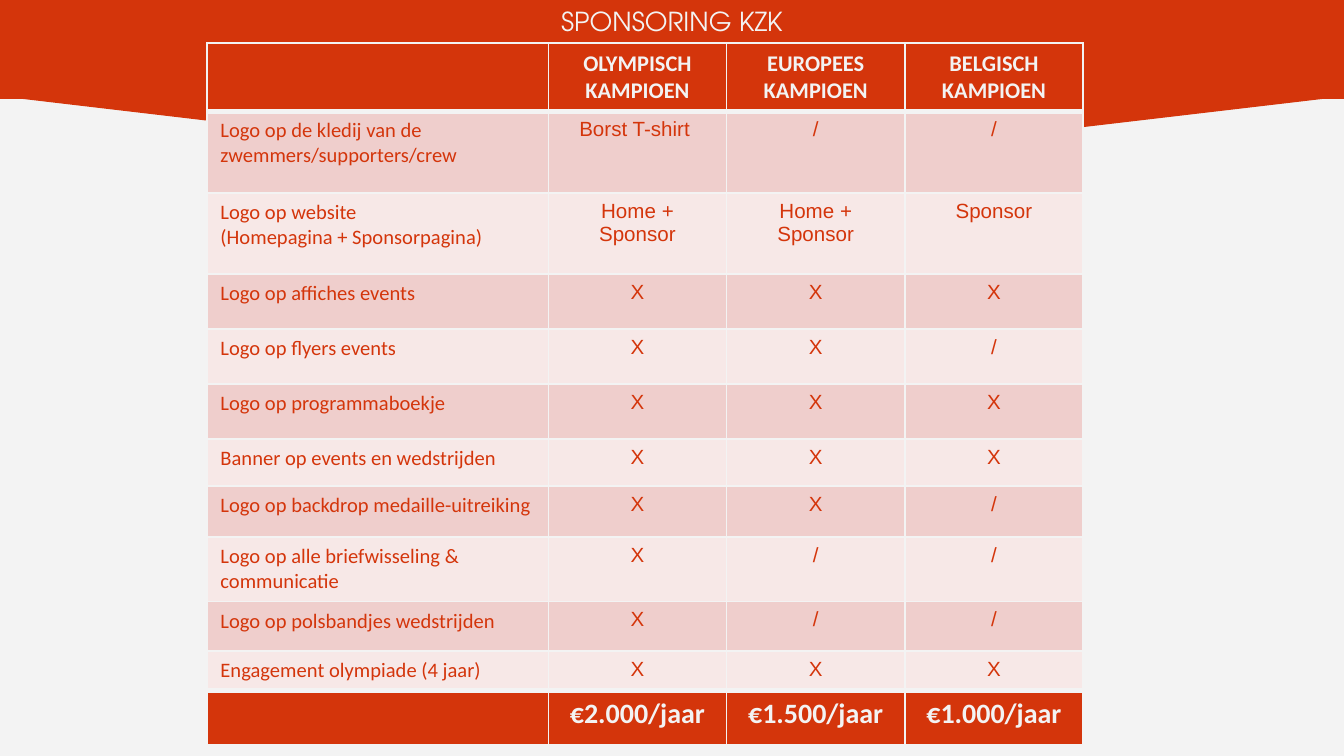
import pptx
import pptx.util
import pptx.dml.color
import pptx.enum.shapes
import pptx.enum.text
import pptx.oxml
import pptx.oxml.ns

Inches, Pt = pptx.util.Inches, pptx.util.Pt
RGB = pptx.dml.color.RGBColor
Shape = pptx.enum.shapes.MSO_SHAPE
Align = pptx.enum.text.PP_ALIGN

RED = RGB(0xD4, 0x35, 0x0B)
PALE = RGB(0xF3, 0xF3, 0xF3)
ROSE = RGB(0xEF, 0xCE, 0xCC)
BLUSH = RGB(0xF7, 0xE8, 0xE7)

TITLE = "SPONSORING KZK"
ROWS = [
    (0.5, "", "OLYMPISCH KAMPIOEN", "EUROPEES KAMPIOEN", "BELGISCH KAMPIOEN"),
    (0.61, "Logo op de kledij van de zwemmers/supporters/crew", "Borst T-shirt ", "/", "/"),
    (0.6, "Logo op website\n(Homepagina + Sponsorpagina)", "Home + Sponsor", "Home + Sponsor", "Sponsor"),
    (0.41, "Logo op affiches events", "X", "X", "X"),
    (0.41, "Logo op flyers events", "X", "X", "/"),
    (0.41, "Logo op programmaboekje", "X", "X", "X"),
    (0.35, "Banner op events en wedstrijden", "X", "X", "X"),
    (0.38, "Logo op backdrop medaille-uitreiking", "X", "X", "/"),
    (0.48, "Logo op alle briefwisseling & communicatie", "X", "/", "/"),
    (0.37, "Logo op polsbandjes wedstrijden", "X", "/", "/"),
    (0.29, "Engagement olympiade (4 jaar)", "X", "X", "X"),
    (0.41, "", "€2.000/jaar", "€1.500/jaar", "€1.000/jaar"),
]
WIDE, LABEL = 6.52, 2.54
COLS = [LABEL] + [(WIDE - LABEL) / 3] * 3
BANNER = [
    (Shape.ISOSCELES_TRIANGLE, 0.71, 0.59, 180),
    (Shape.RECTANGLE, -0.21, 0.94, 0),
]


def style(par, size, face, color, bold=False):
    par.font.size = Pt(size)
    par.font.name = face
    par.font.color.rgb = color
    par.font.bold = bold


def border(cell, top, base):
    props = cell._tc.get_or_add_tcPr()
    for side, width in zip("LRTB", (1, 1, top, base)):
        props.append(pptx.oxml.parse_xml(
            f'<a:ln{side} {pptx.oxml.ns.nsdecls("a")} w="{Pt(width)}">'
            f'<a:solidFill><a:srgbClr val="{PALE}"/></a:solidFill></a:ln{side}>'))


def banner(slide, title):
    for kind, top, high, turn in BANNER:
        shape = slide.shapes.add_shape(
            kind, Inches(-0.01), Inches(top), Inches(10.03), Inches(high))
        shape.rotation = turn
        shape.shadow.inherit = False
        shape.fill.solid()
        shape.fill.fore_color.rgb = RED
        shape.line.color.rgb = RED
        shape.line.width = Pt(0.75)
        title.element.addprevious(shape.element)


def heading(title):
    title.left, title.top = Inches(3.37), Inches(-0.06)
    title.width, title.height = Inches(3.26), Inches(0.75)
    frame = title.text_frame
    frame.text = TITLE
    frame.auto_size = pptx.enum.text.MSO_AUTO_SIZE.NONE
    frame.vertical_anchor = pptx.enum.text.MSO_ANCHOR.TOP
    frame.margin_left = frame.margin_right = Inches(0.1)
    frame.margin_top = frame.margin_bottom = Inches(0.1)
    par = frame.paragraphs[0]
    par.alignment = Align.CENTER
    style(par, 14, "TeX Gyre Adventor", PALE)


def grid(slide):
    last = len(ROWS) - 1
    table = slide.shapes.add_table(
        len(ROWS), len(COLS), Inches(1.54), Inches(0.32),
        Inches(WIDE), Inches(sum(row[0] for row in ROWS))).table
    for col, width in zip(table.columns, COLS):
        col.width = Inches(width)
    for r, (high, *texts) in enumerate(ROWS):
        table.rows[r].height = Inches(high)
        edge = r in (0, last)
        for c, text in enumerate(texts):
            cell = table.cell(r, c)
            border(cell, 3 if r in (1, last) else 1, 3 if r in (0, last - 1) else 1)
            cell.fill.solid()
            cell.fill.fore_color.rgb = RED if edge else ROSE if r % 2 else BLUSH
            cell.text = text
            for par in cell.text_frame.paragraphs:
                par.alignment = Align.CENTER if c else Align.LEFT
                if edge:
                    style(par, 15 if r else 12, "Calibri", PALE, True)
                else:
                    style(par, 11, "Arial" if c else "Calibri", RED)


def main():
    deck = pptx.Presentation()
    deck.slide_width = Inches(10)
    deck.slide_height = deck.slide_width * 9 // 16
    slide = deck.slides.add_slide(deck.slide_layouts[5])
    slide.background.fill.solid()
    slide.background.fill.fore_color.rgb = PALE
    title = slide.shapes.title
    banner(slide, title)
    heading(title)
    grid(slide)
    deck.save("out.pptx")


if __name__ == "__main__":
    main()
